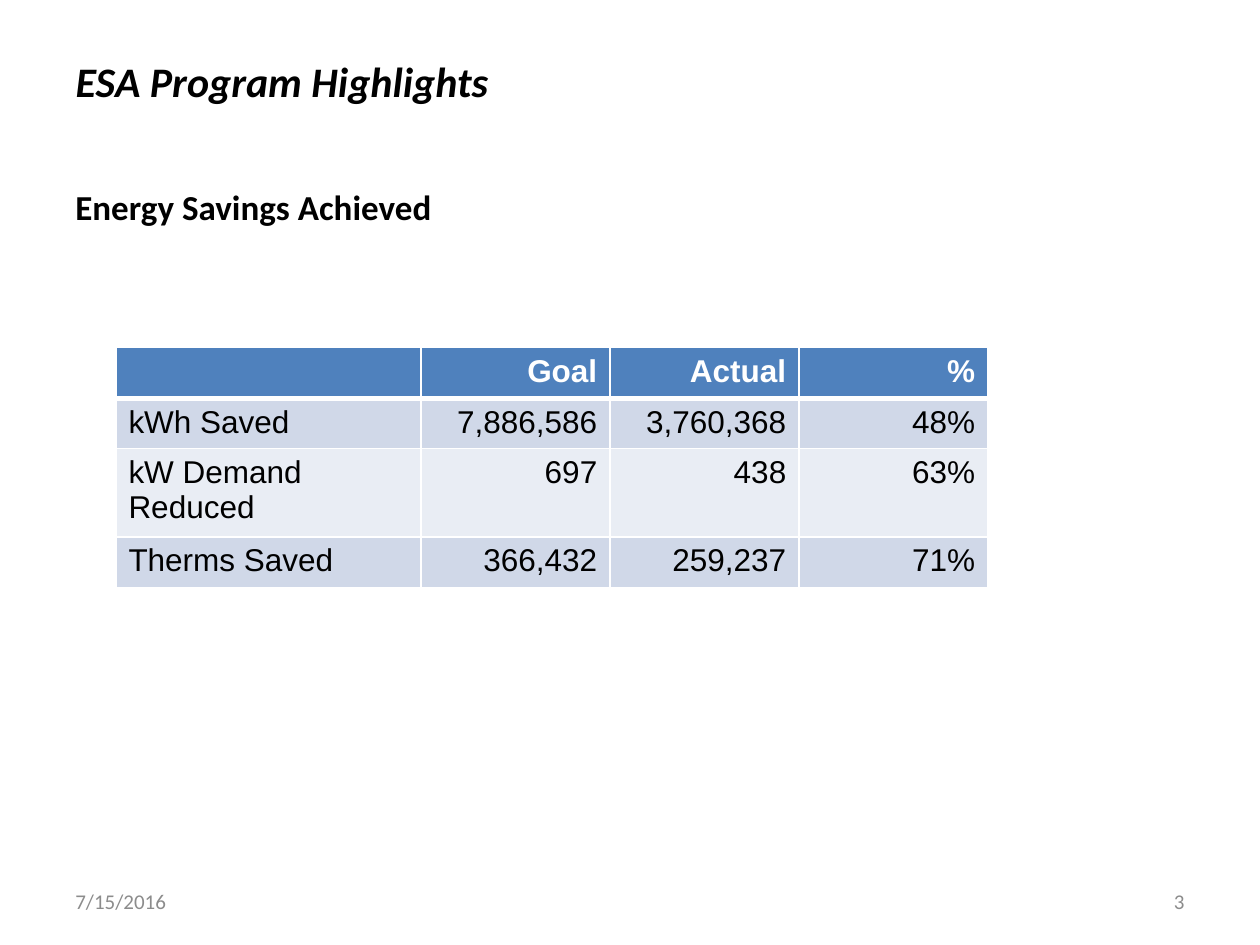
from lxml.etree import SubElement
from pptx import Presentation
from pptx.dml.color import RGBColor
from pptx.enum.text import MSO_ANCHOR, PP_ALIGN
from pptx.oxml.ns import qn
from pptx.util import Inches, Pt

BLACK = RGBColor(0x00, 0x00, 0x00)
WHITE = RGBColor(0xFF, 0xFF, 0xFF)
GRAY = RGBColor(0x8C, 0x8C, 0x8C)
HEADER = RGBColor(0x4F, 0x81, 0xBD)
BANDS = [RGBColor(0xD0, 0xD8, 0xE8), RGBColor(0xE9, 0xED, 0xF4)]

WIDTH, HEIGHT, MARGIN = 10, 7.5, 0.5
FOOTER_TOP, FOOTER_WIDTH, FOOTER_HEIGHT = 6.95, 2.33, 0.4
COLUMNS = [2.42, 1.5, 1.5, 1.5]
ROW_HEIGHT = 0.3
SAVINGS = [
    ["", "Goal", "Actual", "%"],
    ["kWh Saved", "7,886,586", "3,760,368", "48%"],
    ["kW Demand Reduced", "697", "438", "63%"],
    ["Therms Saved", "366,432", "259,237", "71%"],
]


def write(tf, text, size, color, font="Calibri", bold=False, italic=False,
          align=PP_ALIGN.LEFT):
    tf.text = text
    p = tf.paragraphs[0]
    p.alignment = align
    for r in p.runs:
        r.font.name, r.font.size = font, Pt(size)
        r.font.bold, r.font.italic = bold, italic
        r.font.color.rgb = color
    return p


def add_title(s, box):
    sp = s.shapes.title
    sp.left, sp.top, sp.width, sp.height = map(Inches, box)
    sp.text_frame.vertical_anchor = MSO_ANCHOR.MIDDLE
    write(sp.text_frame, "ESA Program Highlights", 24, BLACK,
          bold=True, italic=True)


def add_text(s, box, text, size, color, anchor=MSO_ANCHOR.TOP, **style):
    tf = s.shapes.add_textbox(*map(Inches, box)).text_frame
    tf.word_wrap = True
    tf.vertical_anchor = anchor
    return write(tf, text, size, color, **style)


def set_borders(cell, bottom):
    tcPr = cell._tc.get_or_add_tcPr()
    widths = {"a:lnL": 1, "a:lnR": 1, "a:lnT": 1, "a:lnB": bottom}
    for i, (tag, width) in enumerate(widths.items()):
        ln = SubElement(tcPr, qn(tag), w=str(Pt(width)))
        fill = SubElement(ln, qn("a:solidFill"))
        SubElement(fill, qn("a:srgbClr"), val=str(WHITE))
        tcPr.insert(i, ln)  # borders come before the fill


def add_savings_table(s, box):
    frame = s.shapes.add_table(len(SAVINGS), len(COLUMNS), *map(Inches, box))
    table = frame.table
    for column, width in zip(table.columns, COLUMNS):
        column.width = Inches(width)
    for i, values in enumerate(SAVINGS):
        header = i == 0
        table.rows[i].height = Inches(ROW_HEIGHT)
        for j, value in enumerate(values):
            cell = table.cell(i, j)
            cell.fill.solid()
            cell.fill.fore_color.rgb = HEADER if header else BANDS[(i - 1) % 2]
            set_borders(cell, 3 if header else 1)
            write(cell.text_frame, value, 18, WHITE if header else BLACK,
                  font="Arial", bold=header,
                  align=PP_ALIGN.RIGHT if j else PP_ALIGN.LEFT)
    frame.height = Inches(box[3])


def add_footer(s, box):
    left, top, width, height = box
    right = left + width - FOOTER_WIDTH
    for x, text, align in [(left, "7/15/2016", PP_ALIGN.LEFT),
                           (right, "3", PP_ALIGN.RIGHT)]:
        add_text(s, (x, top, FOOTER_WIDTH, height), text, 12, GRAY,
                 anchor=MSO_ANCHOR.MIDDLE, align=align)


def main():
    prs = Presentation()
    prs.slide_width, prs.slide_height = Inches(WIDTH), Inches(HEIGHT)
    s = prs.slides.add_slide(prs.slide_layouts[5])
    content = WIDTH - 2 * MARGIN

    # Title and body heading
    add_title(s, (MARGIN, 0.33, 6.5, 0.62))
    p = add_text(s, (MARGIN, 1.42, content, 5.28), "Energy Savings Achieved",
                 20, BLACK, bold=True)
    p.space_after = Pt(12)

    # Goals against results
    add_savings_table(s, (0.92, 2.76, sum(COLUMNS), 1.6))

    # Date and slide number
    add_footer(s, (MARGIN, FOOTER_TOP, content, FOOTER_HEIGHT))
    prs.save("out.pptx")


if __name__ == "__main__":
    main()
